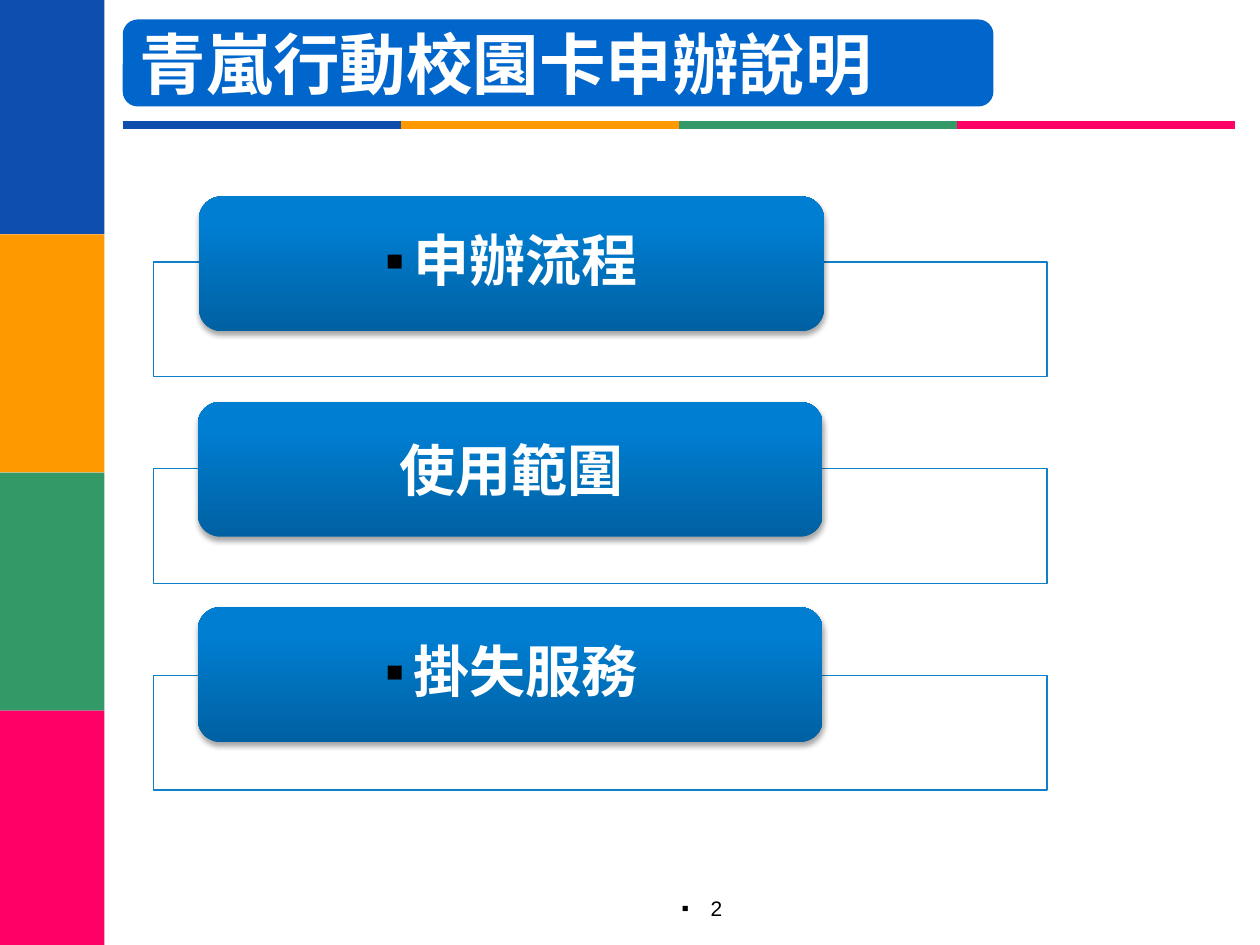
"""Build the campus card agenda slide."""
import copy

import lxml.etree
import pptx
import pptx.dml.color
import pptx.enum.shapes
import pptx.enum.text
import pptx.oxml.ns
import pptx.util

Inches = pptx.util.Inches
Pt = pptx.util.Pt
Shape = pptx.enum.shapes.MSO_SHAPE
Align = pptx.enum.text.PP_ALIGN
Anchor = pptx.enum.text.MSO_ANCHOR
qn = pptx.oxml.ns.qn

TITLE = "青嵐行動校園卡申辦說明"
NUMBER = "2"
CARDS = [
    ("申辦流程", True, 1.58, 1.56),
    ("使用範圍", False, 1.57, 3.19),
    ("掛失服務", True, 1.57, 4.82),
]
BANDS = [("0E4EAD", 1.86), ("FF9900", 1.89), ("339966", 1.89), ("FF0066", 1.86)]
STOPS = [(0, "0061A2"), (0.8, "007ED2"), (1, "007FD3")]
FONT = "Noto Sans CJK SC"
FRAME_TOP, FRAME_STEP = 2.08, 1.64
RULE_LEFT, RULE_RIGHT, RULE_TOP = 0.98, 9.8, 0.99


def rgb(code):
    return pptx.dml.color.RGBColor.from_string(code)


def sub(parent, tag, **attrs):
    return lxml.etree.SubElement(parent, qn(tag), attrs)


def add_box(slide, kind, spot, fill=None, line=None):
    box = slide.shapes.add_shape(kind, *map(Inches, spot))
    box.shadow.inherit = False
    if fill:
        box.fill.solid()
        box.fill.fore_color.rgb = rgb(fill)
    if line:
        box.line.color.rgb = rgb(line)
        box.line.width = Pt(0.75)
    else:
        box.line.fill.background()
    return box


def add_label(slide, spot, inset):
    frame = slide.shapes.add_textbox(*map(Inches, spot)).text_frame
    frame.word_wrap = True
    frame.margin_left = frame.margin_right = Inches(inset)
    return frame


def write(frame, text, size, color, font, align, bold=False):
    para = frame.paragraphs[0]
    para.alignment = align
    run = para.add_run()
    run.text = text
    run.font.size = Pt(size)
    run.font.bold = bold
    run.font.name = font
    run.font.color.rgb = rgb(color)
    sub(run.font._element, "a:ea", typeface=font)
    return para


def add_bullet(para, indent):
    props = para._p.get_or_add_pPr()
    props.set("marL", str(Inches(indent)))
    props.set("indent", str(-Inches(indent)))
    sub(sub(props, "a:buClr"), "a:srgbClr", val="000000")
    sub(props, "a:buFont", typeface="Arial")
    sub(props, "a:buChar", char="▪")


def shade(box):
    box.fill.gradient()
    box.fill.gradient_angle = 90
    last = box._element.spPr.find(".//" + qn("a:gsLst"))[-1]
    last.addnext(copy.deepcopy(last))
    for stop, (place, color) in zip(box.fill.gradient_stops, STOPS):
        stop.position = place
        stop.color.rgb = rgb(color)


def cast(box):
    effects = box._element.spPr.find(qn("a:effectLst"))
    shadow = sub(effects, "a:outerShdw", blurRad=str(Pt(3.1)), dist=str(Pt(1.8)),
                 dir="5400000", rotWithShape="0")
    sub(sub(shadow, "a:srgbClr", val="000000"), "a:alpha", val="35000")


def add_bands(slide):
    top = 0
    step = (RULE_RIGHT - RULE_LEFT) / len(BANDS)
    for i, (color, height) in enumerate(BANDS):
        add_box(slide, Shape.RECTANGLE, (0, top, 0.83, height), color)
        top += height
        left = RULE_LEFT + i * step
        ends = (left, RULE_TOP, left + step, RULE_TOP)
        rule = slide.shapes.add_connector(
            pptx.enum.shapes.MSO_CONNECTOR.STRAIGHT, *map(Inches, ends))
        rule.line.color.rgb = rgb(color)
        rule.line.width = Pt(4.5)
        sub(rule._element.spPr, "a:effectLst")


def add_card(slide, row, text, marked, left, top):
    spot = (1.22, FRAME_TOP + row * FRAME_STEP, 7.09, 0.91)
    back = add_box(slide, Shape.RECTANGLE, spot, "FFFFFF", "107FC9")
    tint = back._element.spPr.find(qn("a:solidFill"))[0]
    sub(tint, "a:alpha", val="90000")
    card = add_box(slide, Shape.ROUNDED_RECTANGLE, (left, top, 4.96, 1.07))
    shade(card)
    cast(card)
    frame = add_label(slide, (1.63, top + 0.05, 4.86, 0.96), 0.19)
    frame.margin_top = frame.margin_bottom = 0
    frame.vertical_anchor = Anchor.MIDDLE
    para = write(frame, text, 32, "FFFFFF", FONT, Align.CENTER, True)
    if marked:
        add_bullet(para, 0.23)
        para.line_spacing = 0.9


def main():
    deck = pptx.Presentation()
    deck.slide_width, deck.slide_height = Inches(10), Inches(7.5)
    slide = deck.slides.add_slide(deck.slide_layouts[6])
    add_bands(slide)
    frame = add_label(slide, (3.5, 7.06, 2.33, 0.29), 0.1)
    add_bullet(write(frame, NUMBER, 12, "000000", "Arial", Align.RIGHT), 0.23)
    for row, card in enumerate(CARDS):
        add_card(slide, row, *card)
    head = add_box(slide, Shape.FLOWCHART_ALTERNATE_PROCESS,
                   (0.98, 0.16, 6.9, 0.68), "0066CC", "0066CC")
    head.text_frame.vertical_anchor = Anchor.MIDDLE
    write(head.text_frame, TITLE, 38, "FFFFFF", FONT, Align.LEFT, True)
    deck.save("out.pptx")


if __name__ == "__main__":
    main()
